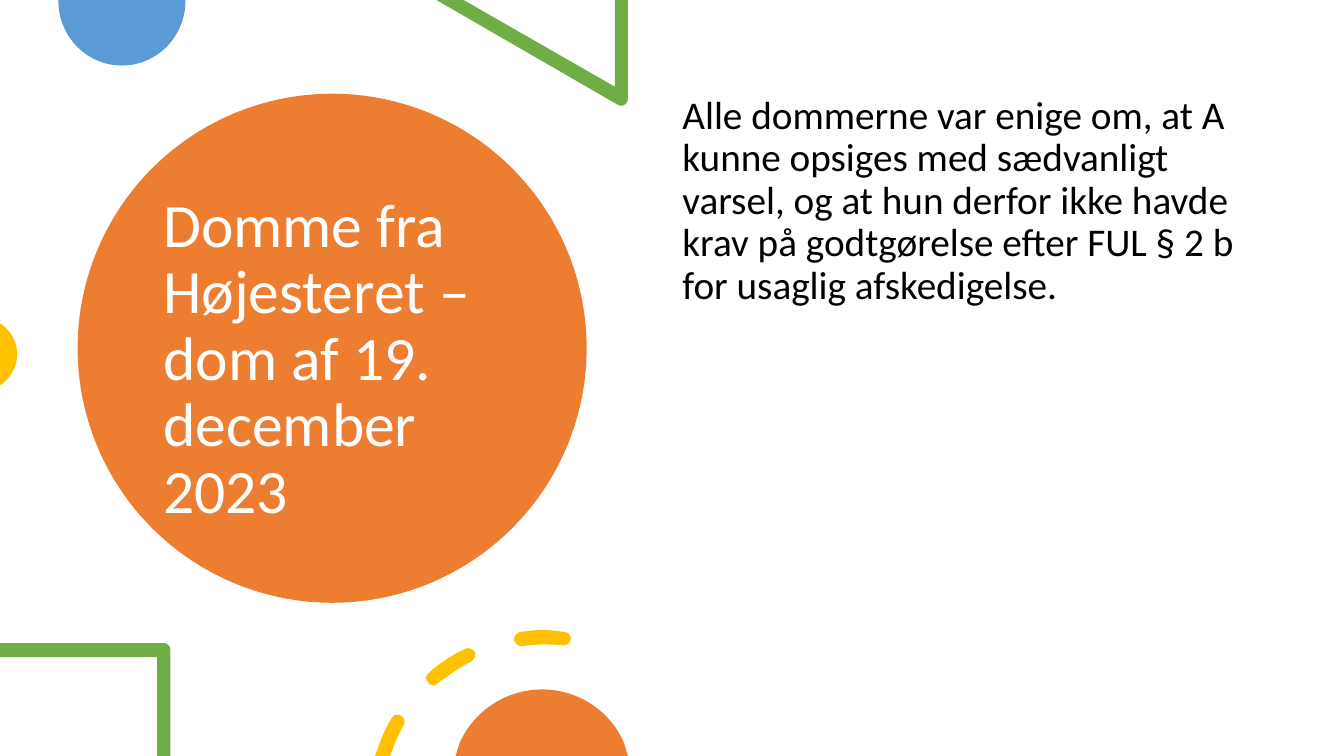
"""Build the slide on the Supreme Court ruling of 19 December 2023."""
from pptx import Presentation
from pptx.dml.color import RGBColor as RGB
from pptx.enum.shapes import MSO_SHAPE as Shape
from pptx.enum.text import MSO_ANCHOR as Anchor, MSO_AUTO_SIZE as Fit, PP_ALIGN as Align
from pptx.util import Inches, Pt
from lxml.etree import SubElement

HUES = {"orange": "ED7D31", "blue": "5B9BD5", "green": "70AD47",
        "gold": "FFC000", "white": "FFFFFF", "black": "000000"}
DML = "{http://schemas.openxmlformats.org/drawingml/2006/main}"


def paint(shape, hue):
    shape.fill.solid()
    shape.fill.fore_color.rgb = RGB.from_string(HUES[hue])
    shape.line.fill.background()
    shape.shadow.inherit = False


def bend(shape, steps):
    """Make each six-number step of the outline a cubic curve."""
    nodes = [n for n in shape._element.iter(DML + "moveTo", DML + "lnTo")]
    for node, step in zip(nodes, steps):
        if len(step) == 6:
            node.tag = DML + "cubicBezTo"
            node.remove(node[0])
            for x, y in zip(step[::2], step[1::2]):
                SubElement(node, DML + "pt", x=str(Inches(x) - shape.left),
                           y=str(Inches(y) - shape.top))


deck = Presentation()
deck.slide_width, deck.slide_height = Inches(40 / 3), Inches(7.5)
slide = deck.slides.add_slide(deck.slide_layouts[1])
shapes = slide.shapes
title, body = slide.placeholders

disc = shapes.add_shape(Shape.OVAL, Inches(0.77), Inches(0.93), Inches(5.05), Inches(5.05))
paint(disc, "orange")
title._element.addprevious(disc._element)

texts = [
    (title, (1.52, 1.35, 3.54, 4.45), Anchor.MIDDLE, 44, "white", 0,
     "Domme fra Højesteret – dom af 19. december 2023"),
    (body, (6.67, 0.9, 5.75, 5.35), Anchor.TOP, 28, "black", 10,
     "Alle dommerne var enige om, at A kunne opsiges med sædvanligt varsel, "
     "og at hun derfor ikke havde krav på godtgørelse efter FUL § 2 b "
     "for usaglig afskedigelse."),
]
for box, place, anchor, size, hue, gap, words in texts:
    box.left, box.top, box.width, box.height = map(Inches, place)
    frame = box.text_frame
    frame.text = words
    frame.word_wrap = True
    frame.auto_size = Fit.NONE
    frame.vertical_anchor = anchor
    para = frame.paragraphs[0]
    para.alignment = Align.LEFT
    para.line_spacing = 0.9
    para.space_before = Pt(gap)
    para.font.name = "Calibri"
    para.font.size = Pt(size)
    para.font.color.rgb = RGB.from_string(HUES[hue])

props = body.text_frame.paragraphs[0]._p.get_or_add_pPr()
props.set("marL", "0")
props.set("indent", "0")
mark = SubElement(props, DML + "buNone")
props.find(DML + "defRPr").addprevious(mark)

decor = [
    ("blue", [[(1.84, 0), (0.58, 0), (0.58, 0.01), (0.58, 0.36, 0.86, 0.65, 1.21, 0.65),
               (1.56, 0.65, 1.84, 0.36, 1.84, 0.01)]]),
    ("green", [[(6.23, 0), (6.1, 0), (6.1, 0.86), (4.6, 0), (4.33, 0), (6.13, 1.04),
                (6.14, 1.05, 6.15, 1.05, 6.16, 1.05), (6.2, 1.05, 6.23, 1.02, 6.23, 0.98)]]),
    ("gold", [[(0, 3.21), (0, 3.82), (0.02, 3.81), (0.11, 3.74, 0.17, 3.64, 0.17, 3.51),
               (0.17, 3.39, 0.11, 3.29, 0.02, 3.22)]]),
    ("green", [[(1.63, 6.38), (0, 6.38), (0, 6.52), (1.56, 6.52), (1.56, 7.5), (1.69, 7.5),
                (1.69, 6.45), (1.69, 6.41, 1.66, 6.38, 1.63, 6.38)]]),
    ("gold", [
        [(3.95, 7.09), (3.93, 7.08, 3.9, 7.1, 3.89, 7.12), (3.85, 7.18, 3.82, 7.25, 3.79, 7.31),
         (3.72, 7.5), (3.87, 7.5), (3.92, 7.37), (3.94, 7.31, 3.97, 7.25, 4.01, 7.19),
         (4.02, 7.16, 4.01, 7.11, 3.98, 7.1), (3.97, 7.09, 3.96, 7.09, 3.95, 7.09)],
        [(4.64, 6.43), (4.63, 6.43, 4.62, 6.43, 4.61, 6.44), (4.48, 6.5, 4.36, 6.58, 4.25, 6.68),
         (4.22, 6.7, 4.22, 6.75, 4.25, 6.77), (4.26, 6.79, 4.28, 6.8, 4.3, 6.8),
         (4.32, 6.8, 4.33, 6.79, 4.34, 6.78), (4.45, 6.7, 4.56, 6.62, 4.68, 6.56),
         (4.71, 6.54, 4.72, 6.5, 4.71, 6.47), (4.69, 6.44, 4.67, 6.43, 4.64, 6.43)],
        [(5.38, 6.25), (5.31, 6.25, 5.24, 6.26, 5.16, 6.27), (5.13, 6.27, 5.1, 6.31, 5.1, 6.35),
         (5.11, 6.38, 5.14, 6.41, 5.17, 6.41), (5.18, 6.41, 5.18, 6.41, 5.18, 6.41),
         (5.32, 6.39, 5.45, 6.39, 5.58, 6.4),
         (5.62, 6.41, 5.65, 6.38, 5.66, 6.35), (5.67, 6.31, 5.64, 6.27, 5.6, 6.27),
         (5.53, 6.26, 5.45, 6.25, 5.38, 6.25)],
    ]),
    ("orange", [[(5.38, 6.84), (5.01, 6.84, 4.7, 7.06, 4.56, 7.37), (4.52, 7.5), (6.23, 7.5),
                 (6.19, 7.37), (6.06, 7.06, 5.74, 6.84, 5.38, 6.84)]]),
]
for hue, loops in decor:
    pen = None
    for loop in loops:
        first, *rest = [(Inches(s[-2]), Inches(s[-1])) for s in loop]
        if pen:
            pen.move_to(*first)
        else:
            pen = shapes.build_freeform(*first)
        pen.add_line_segments(rest)
    form = pen.convert_to_shape()
    bend(form, sum(loops, []))
    paint(form, hue)

deck.save("out.pptx")
